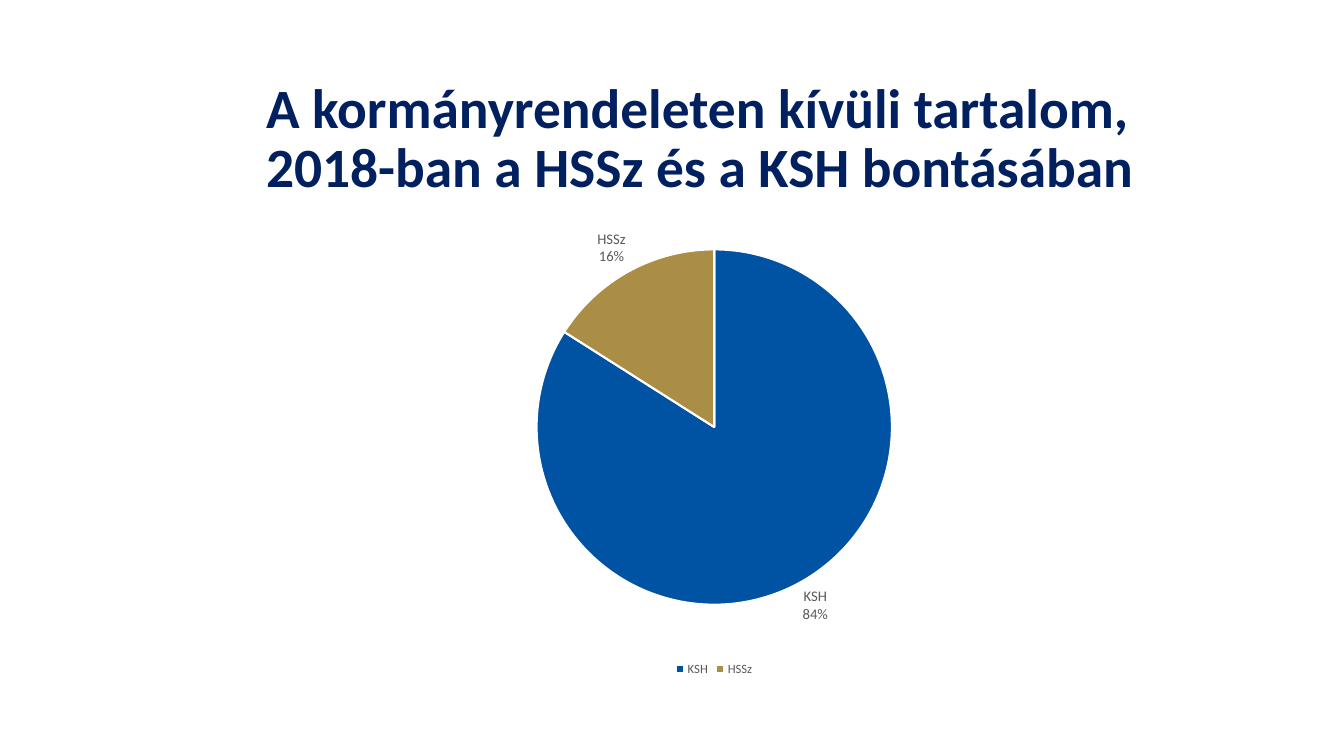
from lxml.etree import SubElement
from pptx import Presentation
from pptx.chart.data import CategoryChartData
from pptx.dml.color import RGBColor
from pptx.enum.chart import XL_CHART_TYPE, XL_LABEL_POSITION, XL_LEGEND_POSITION
from pptx.enum.text import MSO_ANCHOR, MSO_AUTO_SIZE, PP_ALIGN
from pptx.oxml.ns import qn
from pptx.util import Cm, Pt

NAVY, BLUE, GOLD, GREY, WHITE = "002060", "0053A2", "AB8E45", "595959", "FFFFFF"


def paint(color, code):
    color.rgb = RGBColor.from_string(code)


def fill(part, code):
    part.fill.solid()
    paint(part.fill.fore_color, code)


def box(left, top, width, height):
    return Cm(left), Cm(top), Cm(width), Cm(height)


def place(plot, **ratios):
    """Fix the inner plot area as shares of the chart's size."""
    area = plot._element.getparent()
    for old in area.findall(qn("c:layout")):
        area.remove(old)
    layout = SubElement(area, qn("c:layout"))
    area.insert(0, layout)
    manual = SubElement(layout, qn("c:manualLayout"))
    marks = {"layoutTarget": "inner", "xMode": "edge", "yMode": "edge", **ratios}
    for tag, val in marks.items():
        SubElement(manual, qn("c:" + tag)).set("val", str(val))


class Deck:
    """Holds the style and the current slide."""

    def __init__(self, face="Calibri"):
        self.face = face
        self.show = Presentation()
        self.show.slide_width, self.show.slide_height = Cm(33.87), Cm(19.05)
        self.slide = self.show.slides.add_slide(self.show.slide_layouts[5])
        fill(self.slide.background, WHITE)

    def style(self, font, size, code, bold=False):
        font.name, font.size, font.bold = self.face, Pt(size), bold
        paint(font.color, code)

    def put_text(self, frame, text, size, code, bold=False, align=PP_ALIGN.LEFT, spacing=1.0):
        para = frame.paragraphs[0]
        para.alignment, para.line_spacing = align, spacing
        run = para.add_run()
        run.text = text
        self.style(run.font, size, code, bold)

    def title(self, text, spot, **form):
        shape = self.slide.shapes.title
        shape.left, shape.top, shape.width, shape.height = spot
        frame = shape.text_frame
        frame.word_wrap, frame.auto_size = True, MSO_AUTO_SIZE.NONE
        frame.vertical_anchor = MSO_ANCHOR.MIDDLE
        self.put_text(frame, text, **form)

    def pie(self, shares, hues, spot):
        data = CategoryChartData()
        data.categories = list(shares)
        data.add_series("Series 1", list(shares.values()))
        chart = self.slide.shapes.add_chart(XL_CHART_TYPE.PIE, *spot, data).chart
        self.style(chart.font, 10, "000000")
        chart.has_title = False
        chart.has_legend = True
        chart.legend.position = XL_LEGEND_POSITION.BOTTOM
        chart.legend.include_in_layout = False
        self.style(chart.legend.font, 9, GREY)

        plot = chart.plots[0]
        plot.vary_by_categories = True
        place(plot, x=0.3, y=0.09, w=0.4, h=0.75)
        for index, hue in enumerate(hues):
            form = plot.series[0].points[index].format
            fill(form, hue)
            fill(form.line, WHITE)
            form.line.width = Pt(1.5)

        plot.has_data_labels = True
        labels = plot.data_labels
        labels.show_category_name = labels.show_percentage = True
        labels.show_value = False
        labels.number_format, labels.number_format_is_linked = "0%", False
        labels.position = XL_LABEL_POSITION.OUTSIDE_END
        self.style(labels.font, 10.5, GREY)


def main():
    deck = Deck()
    deck.title("A kormányrendeleten kívüli tartalom, 2018-ban a HSSz és a KSH bontásában",
               box(6.45, 2.36, 23.04, 2.34), size=39.6, code=NAVY, bold=True, spacing=0.9)
    deck.pie({"KSH": 84, "HSSz": 16}, (BLUE, GOLD), box(6.48, 5.21, 23.04, 11.94))
    deck.show.save("out.pptx")


if __name__ == "__main__":
    main()
